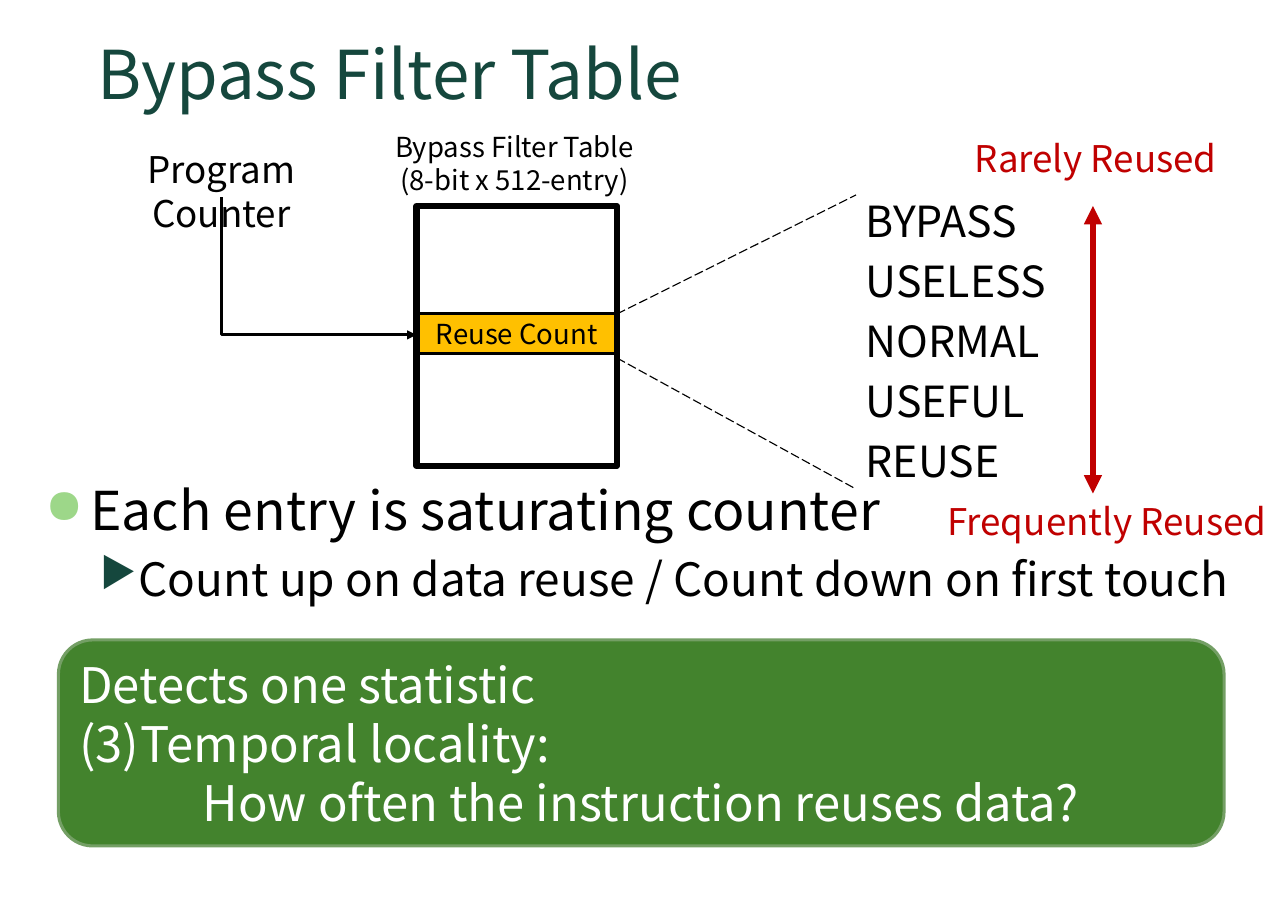
import pptx
import pptx.util
import pptx.dml.color
import pptx.enum.dml
import pptx.enum.shapes
import pptx.enum.text
import pptx.oxml.ns
import lxml.etree

Inches = pptx.util.Inches
Pt = pptx.util.Pt
Shapes = pptx.enum.shapes.MSO_SHAPE
Connectors = pptx.enum.shapes.MSO_CONNECTOR
Anchor = pptx.enum.text.MSO_ANCHOR
Align = pptx.enum.text.PP_ALIGN

COLORS = {
    "black": "000000", "white": "FFFFFF", "title": "15473D", "red": "C00000",
    "entry": "FFC000", "bullet": "9DD789", "summary": "43832D", "border": "749F65",
}


def color(name):
    return pptx.dml.color.RGBColor.from_string(COLORS[name])


def add_element(parent, tag, **attributes):
    element = lxml.etree.SubElement(parent, pptx.oxml.ns.qn(tag))
    for name, value in attributes.items():
        element.set(name, str(value))
    return element


class SlideBuilder:
    font_name = "Noto Sans CJK JP"

    def __init__(self, presentation):
        self.slide = presentation.slides.add_slide(presentation.slide_layouts[6])

    def fill_text(self, shape, paragraphs, size, text_color="black", align=Align.LEFT,
                  anchor=Anchor.TOP, inset=0.1):
        """Each paragraph is a string or a dict of text and its own format."""
        frame = shape.text_frame
        frame_format = {
            "word_wrap": True, "vertical_anchor": anchor,
            "margin_left": Inches(inset), "margin_right": Inches(inset),
            "margin_top": Inches(0.05), "margin_bottom": Inches(0.05),
        }
        for name, value in frame_format.items():
            setattr(frame, name, value)
        for index, item in enumerate(paragraphs):
            item = {"text": item} if isinstance(item, str) else item
            paragraph = frame.add_paragraph() if index else frame.paragraphs[0]
            paragraph.alignment = align
            paragraph.level = item.get("level", 0)
            if index and "before" in item:
                paragraph.space_before = Pt(item["before"])
            self.indent(paragraph, item)
            run = paragraph.add_run()
            run.text = item["text"]
            font_format = {"name": self.font_name, "size": Pt(item.get("size", size))}
            for name, value in font_format.items():
                setattr(run.font, name, value)
            run.font.color.rgb = color(text_color)

    def indent(self, paragraph, item):
        properties = paragraph._p.get_or_add_pPr()
        left, first = item.get("indent", (0, 0))
        properties.set("marL", str(Inches(left)))
        properties.set("indent", str(Inches(first)))
        if "bullet" in item:
            bullet_color = add_element(properties, "a:buClr")
            add_element(bullet_color, "a:srgbClr", val=COLORS[item["bullet_color"]])
            add_element(properties, "a:buSzPct", val=90000)
            add_element(properties, "a:buChar", char=item["bullet"])
        elif "number" in item:
            add_element(properties, "a:buAutoNum", type="arabicParenBoth",
                        startAt=item["number"])
        else:
            add_element(properties, "a:buNone")

    def text(self, box, paragraphs, size, **style):
        shape = self.slide.shapes.add_textbox(*map(Inches, box))
        self.fill_text(shape, paragraphs, size, **style)

    def box(self, kind, box, fill, line, width):
        shape = self.slide.shapes.add_shape(kind, *map(Inches, box))
        shape.shadow.inherit = False
        if fill:
            shape.fill.solid()
            shape.fill.fore_color.rgb = color(fill)
        else:
            shape.fill.background()
        shape.line.color.rgb = color(line)
        shape.line.width = Pt(width)
        return shape

    def line(self, start, end, width, line_color="black", kind=Connectors.STRAIGHT,
             dash=None, ends=()):
        connector = self.slide.shapes.add_connector(kind, *map(Inches, start + end))
        connector.line.color.rgb = color(line_color)
        connector.line.width = Pt(width)
        if dash:
            connector.line.dash_style = dash
        properties = connector._element.spPr
        for tag in ends:
            add_element(properties.find(pptx.oxml.ns.qn("a:ln")), tag, type="triangle")
        add_element(properties, "a:effectLst")
        return connector

    def corner(self, start, end, width):
        """Arrow that runs down and then right: a mirrored elbow, turned 270 degrees."""
        middle_x, middle_y = (start[0] + end[0]) / 2, (start[1] + end[1]) / 2
        half_across, half_down = (end[1] - start[1]) / 2, (end[0] - start[0]) / 2
        connector = self.line((middle_x + half_across, middle_y - half_down),
                              (middle_x - half_across, middle_y + half_down),
                              width, kind=Connectors.ELBOW, ends=("a:tailEnd",))
        properties = connector._element.spPr
        properties.find(pptx.oxml.ns.qn("a:xfrm")).set("rot", str(270 * 60000))
        properties.find(pptx.oxml.ns.qn("a:prstGeom")).set("prst", "bentConnector2")


def main():
    presentation = pptx.Presentation()
    presentation.slide_width = Inches(11.69)
    presentation.slide_height = Inches(8.27)
    builder = SlideBuilder(presentation)

    # Title and bullets
    builder.text((0.78, 0.22, 8.9, 0.87), ["Bypass Filter Table"], 44,
                 text_color="title", anchor=Anchor.MIDDLE, inset=0.11)
    builder.text((0.28, 4.28, 11.07, 1.43), [
        {"text": "Each entry is saturating counter", "indent": (0.43, -0.41),
         "bullet": "●", "bullet_color": "bullet"},
        {"text": "Count up on data reuse / Count down on first touch", "level": 1,
         "size": 30, "before": 6, "indent": (0.86, -0.34),
         "bullet": "▶", "bullet_color": "title"},
    ], 35, inset=0.11)

    # Filter table with the selected entry
    table_left, table_width = 3.78, 1.82
    table_right = table_left + table_width
    entry = builder.box(Shapes.RECTANGLE, (table_left, 2.85, table_width, 0.36),
                        "entry", "black", 2)
    builder.fill_text(entry, ["Reuse Count"], 18, align=Align.CENTER,
                      anchor=Anchor.MIDDLE)
    builder.box(Shapes.RECTANGLE, (table_left, 1.87, table_width, 2.36),
                None, "black", 4)
    builder.text((3.39, 1.13, 2.56, 0.71),
                 ["Bypass Filter Table", "(8-bit x 512-entry)"], 18, align=Align.CENTER)

    # Program counter pointing at the entry
    builder.text((0.68, 1.28, 2.66, 0.51), ["Program Counter"], 24, align=Align.CENTER)
    builder.corner((2.01, 1.79), (table_left, 3.04), 2)

    # Counter states, from rarely to frequently reused
    states = ["BYPASS", "USELESS", "NORMAL", "USEFUL", "REUSE"]
    builder.text((7.76, 1.72, 1.93, 2.9),
                 [{"text": state, "before": 5.6, "indent": (0.38, -0.38)}
                  for state in states], 28)
    builder.line((9.92, 1.87), (9.92, 4.48), 4, "red", ends=("a:headEnd", "a:tailEnd"))
    builder.text((8.75, 1.18, 2.41, 0.5), ["Rarely Reused"], 24, text_color="red")
    builder.text((8.5, 4.48, 3.46, 0.5), ["Frequently Reused"], 24, text_color="red")
    for entry_y, states_y in ((2.85, 1.77), (3.25, 4.44)):
        builder.line((table_right, entry_y), (7.77, states_y), 0.75,
                     dash=pptx.enum.dml.MSO_LINE.LONG_DASH)

    # Summary
    summary = builder.box(Shapes.ROUNDED_RECTANGLE, (0.53, 5.81, 10.58, 1.87),
                          "summary", "border", 2)
    builder.fill_text(summary, [
        "Detects one statistic",
        {"text": "Temporal locality:", "indent": (0.56, -0.56), "number": 3},
        {"text": "How often the instruction reuses data?", "level": 1,
         "indent": (1.12, 0)},
    ], 32, text_color="white", anchor=Anchor.MIDDLE)

    presentation.save("out.pptx")


if __name__ == "__main__":
    main()
